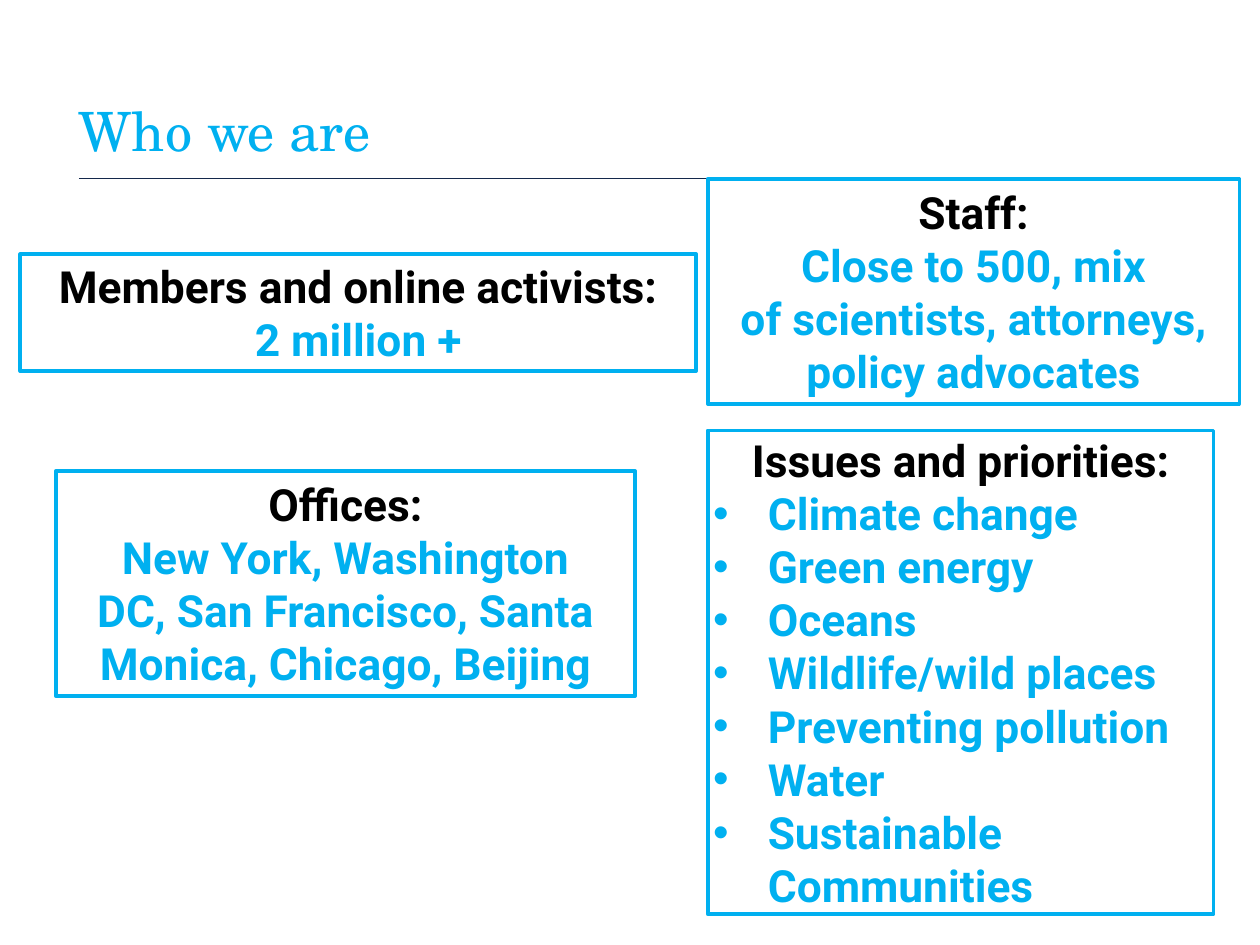
"""Build the "Who we are" slide: a ruled title and four outlined fact boxes."""
import pptx
import pptx.util
import pptx.dml.color
import pptx.enum.shapes
import pptx.enum.text
import pptx.oxml.ns
import lxml.etree

Cm, Pt = pptx.util.Cm, pptx.util.Pt
RGBColor = pptx.dml.color.RGBColor
PP_ALIGN = pptx.enum.text.PP_ALIGN
ANCHOR = pptx.enum.text.MSO_ANCHOR
qn = pptx.oxml.ns.qn

BLUE = RGBColor(0x00, 0xB0, 0xF0)
NAVY = RGBColor(0x14, 0x28, 0x4B)
BLACK = RGBColor(0x00, 0x00, 0x00)


def place(shape, left, top, width, height, inset):
    shape.left, shape.top = Cm(left), Cm(top)
    shape.width, shape.height = Cm(width), Cm(height)
    frame = shape.text_frame
    frame.word_wrap = True
    frame.vertical_anchor = ANCHOR.MIDDLE
    frame.margin_left = frame.margin_right = Cm(inset)
    frame.margin_top = frame.margin_bottom = Cm(inset)


def style(run, font, size, color, bold):
    run.font.name, run.font.size = font, Pt(size)
    run.font.color.rgb, run.font.bold = color, bold


deck = pptx.Presentation()
deck.slide_width, deck.slide_height = Cm(36.12), Cm(27.1)
slide = deck.slides.add_slide(deck.slide_layouts[1])

rule = slide.shapes.add_connector(
    pptx.enum.shapes.MSO_CONNECTOR.STRAIGHT, Cm(2.26), Cm(5.13), Cm(33.93), Cm(5.13))
rule.line.color.rgb, rule.line.width = NAVY, Pt(1)
lxml.etree.SubElement(rule.element.spPr, qn("a:effectLst"))

title = slide.shapes.title
place(title, 2.26, 2.67, 31.6, 2.11, 0)
title.text_frame.text = "Who we are"
title.text_frame.auto_size = pptx.enum.text.MSO_AUTO_SIZE.NONE
head = title.text_frame.paragraphs[0]
head.alignment = PP_ALIGN.LEFT
style(head.runs[0], "TeX Gyre Schola", 44, BLUE, False)

facts = [
    ((0.58, 7.29, 19.38, 3.35), ["Members and online activists:", "2 million +"]),
    ((20.29, 5.13, 15.24, 6.45), [
        "Staff:", "Close to 500, mix", "of scientists, attorneys, policy advocates"]),
    ((1.6, 13.51, 16.61, 6.45), [
        "Offices:", "New York, Washington",
        "DC, San Francisco, Santa Monica, Chicago, Beijing"]),
    ((20.29, 12.22, 14.5, 14.12), [
        "Issues and priorities:", "Climate change", "Green energy", "Oceans",
        "Wildlife/wild places", "Preventing pollution", "Water",
        "Sustainable Communities"]),
]
issues = slide.placeholders[1]
boxes = [slide.shapes.add_shape(pptx.enum.shapes.MSO_SHAPE.RECTANGLE, 0, 0, 0, 0)
         for _ in facts[:-1]] + [issues]

for box, (spot, lines) in zip(boxes, facts):
    place(box, *spot, 0.15)
    box.fill.background()
    box.line.color.rgb, box.line.width = BLUE, Pt(3)
    if box is not issues:
        box.shadow.inherit = False
    frame = box.text_frame
    frame.auto_size = pptx.enum.text.MSO_AUTO_SIZE.SHAPE_TO_FIT_TEXT
    frame.text = "\n".join(lines)
    for row, para in enumerate(frame.paragraphs):
        listed = box is issues and row > 0
        para.alignment = PP_ALIGN.LEFT if listed else PP_ALIGN.CENTER
        para.space_before = Pt(0)
        if box is issues:
            props = para._p.get_or_add_pPr()
            indent = Cm(1.57) if listed else 0
            props.set("marL", str(indent))
            props.set("indent", str(-indent))
            if listed:
                lxml.etree.SubElement(props, qn("a:buFont"), typeface="Arial")
                lxml.etree.SubElement(props, qn("a:buChar"), char="•")
            else:
                lxml.etree.SubElement(props, qn("a:buNone"))
        style(para.runs[0], "Roboto", 36, BLUE if row else BLACK, True)

deck.save("out.pptx")
